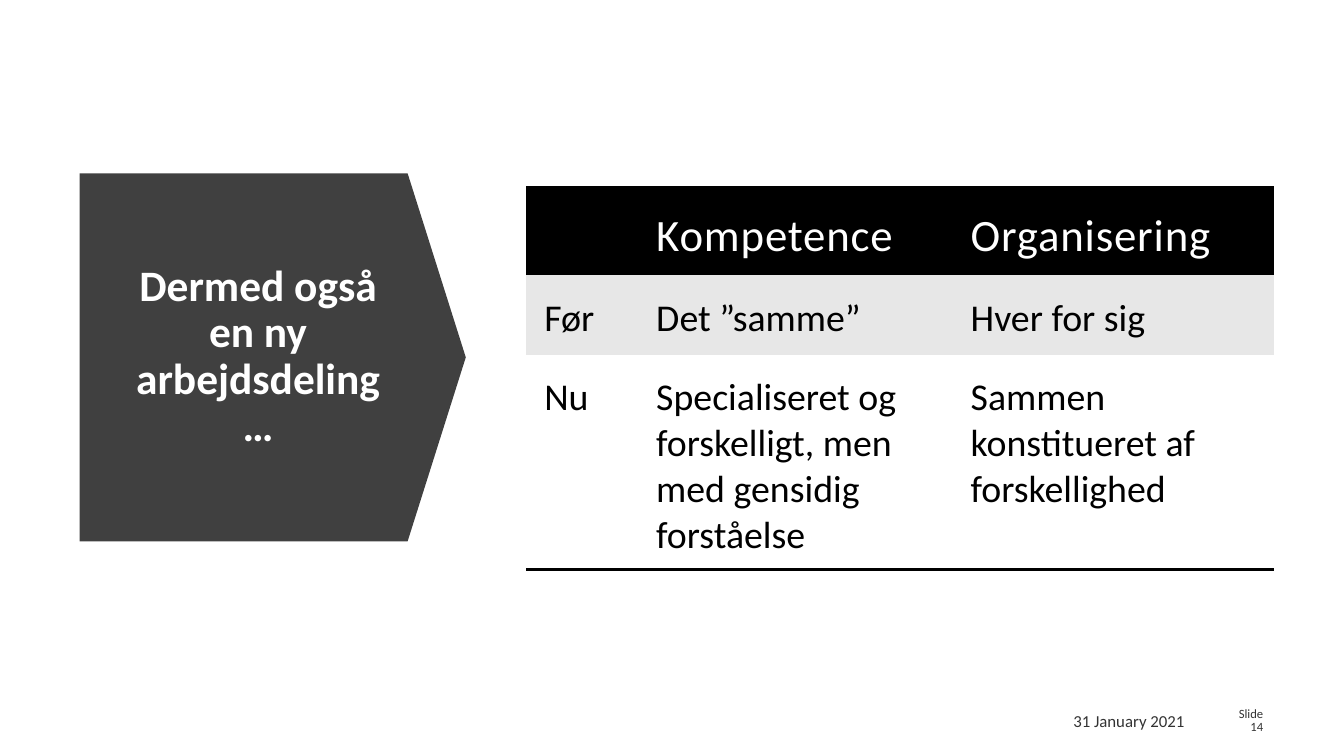
"""Build a slide with an arrow title and a table on the new division of labour."""
import pptx
import pptx.dml.color
import pptx.enum.shapes
import pptx.enum.text
import pptx.oxml
import pptx.oxml.ns
import pptx.util

RGB = pptx.dml.color.RGBColor
BLACK = RGB(0x00, 0x00, 0x00)
WHITE = RGB(0xFF, 0xFF, 0xFF)
DARK = RGB(0x40, 0x40, 0x40)
INK = RGB(0x33, 0x33, 0x33)
PALE = RGB(0xE7, 0xE7, 0xE7)
ALIGN = pptx.enum.text.PP_ALIGN
ANCHOR = pptx.enum.text.MSO_ANCHOR
PLAIN = "{2D5ABB26-0587-4C30-8999-92F81FD0307C}"

deck = pptx.Presentation()
deck.slide_width = pptx.util.Inches(13.33)
deck.slide_height = pptx.util.Inches(7.5)
COL = deck.slide_width / 100
ROW = deck.slide_height / 100


def grid(left, top, width, height):
    """Turn percent of the slide into left, top, width and height."""
    return int(left * COL), int(top * ROW), int(width * COL), int(height * ROW)


def write(frame, text, size, color, bold=False, align=ALIGN.LEFT,
          line=1.0, after=0, space=0):
    """Put one formatted paragraph into a text frame."""
    frame.word_wrap = True
    para = frame.paragraphs[0]
    para.alignment = align
    para.line_spacing = line
    para.space_after = pptx.util.Pt(after)
    run = para.add_run()
    run.text = text
    run.font.name = "Calibri"
    run.font.size = pptx.util.Pt(size)
    run.font.bold = bold
    run.font.color.rgb = color
    if space:
        run.font._element.set("spc", str(space))


slide = deck.slides.add_slide(deck.slide_layouts[5])
shapes = slide.shapes

arrow = shapes.add_shape(pptx.enum.shapes.MSO_SHAPE.DOWN_ARROW,
                         *grid(6.6, 21.73, 27.38, 51.07))
arrow.adjustments[0] = 1
arrow.adjustments[1] = 0.158
arrow.rotation = 270
arrow.shadow.inherit = False
arrow.fill.solid()
arrow.fill.fore_color.rgb = DARK
arrow.line.fill.background()

title = shapes.title
title.left, title.top, title.width, title.height = grid(8.4, 28.67, 21.6, 37.2)
title.text_frame.vertical_anchor = ANCHOR.MIDDLE
title.text_frame.auto_size = pptx.enum.text.MSO_AUTO_SIZE.NONE
write(title.text_frame, "Dermed også en ny arbejdsdeling…", 31, WHITE,
      bold=True, align=ALIGN.CENTER, line=0.9)
arrow._element.addnext(title._element)

for text, left, width, size, line in [("31 January 2021", 72.53, 16.35, 12, 1.0),
                                      ("Slide 14", 90.53, 4.2, 9, 0.9)]:
    box = shapes.add_textbox(*grid(left, 92.67, width, 5.33))
    box.text_frame.vertical_anchor = ANCHOR.MIDDLE
    write(box.text_frame, text, size, INK, align=ALIGN.RIGHT, line=line, after=6)

DATA = [
    ("", "Kompetence", "Organisering"),
    ("Før", "Det ”samme”", "Hver for sig"),
    ("Nu", "Specialiseret og forskelligt, men med gensidig forståelse",
     "Sammen konstitueret af forskellighed"),
]
FILLS = [BLACK, PALE, WHITE]
EDGES = {0: "lnT", 2: "lnB"}

table = shapes.add_table(3, 3, *grid(39.15, 24.8, 55.65, 50.53)).table
table._tbl.tblPr.find(pptx.oxml.ns.qn("a:tableStyleId")).text = PLAIN
for column, width in zip(table.columns, [8.33, 23.4, 23.9]):
    column.width = int(width * COL)
for row, height in zip(table.rows, [11.6, 10.53, 28.4]):
    row.height = int(height * ROW)

for r, texts in enumerate(DATA):
    head = r == 0
    for c, text in enumerate(texts):
        cell = table.cell(r, c)
        cell.margin_left = cell.margin_right = int(1.35 * COL)
        cell.margin_top = int(2.67 * ROW)
        cell.margin_bottom = int(1.33 * ROW)
        cell.vertical_anchor = ANCHOR.MIDDLE if head else ANCHOR.TOP
        cell.fill.solid()
        cell.fill.fore_color.rgb = FILLS[r]
        if text:
            write(cell.text_frame, text, 32 if head else 27,
                  WHITE if head else BLACK, space=60 if head else 0)
        if r in EDGES:
            edge = pptx.oxml.parse_xml(
                f'<a:{EDGES[r]} {pptx.oxml.ns.nsdecls("a")} w="25400"><a:solidFill>'
                f'<a:srgbClr val="{BLACK}"/></a:solidFill></a:{EDGES[r]}>')
            cell._tc.get_or_add_tcPr().insert(0, edge)

deck.save("out.pptx")
